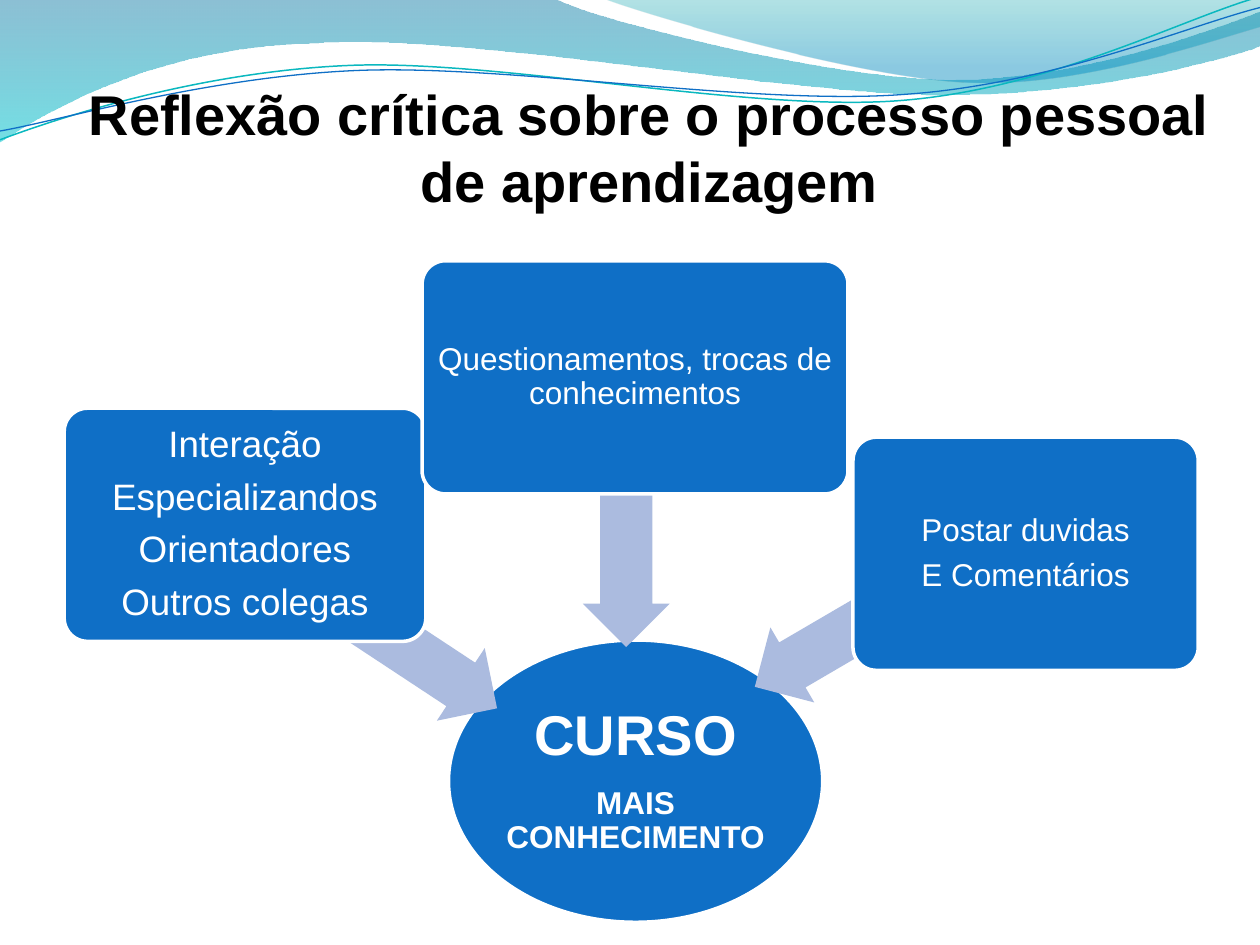
from lxml.etree import SubElement
from pptx import Presentation
from pptx.dml.color import RGBColor
from pptx.enum.shapes import MSO_SHAPE as Shape
from pptx.enum.text import MSO_ANCHOR as Anchor, PP_ALIGN as Align
from pptx.oxml.ns import qn
from pptx.util import Inches, Pt

WHITE = RGBColor(0xFF, 0xFF, 0xFF)
BLACK = RGBColor(0x00, 0x00, 0x00)
BLUE = RGBColor(0x0F, 0x6F, 0xC6)
LAVENDER = RGBColor(0xAB, 0xBB, 0xDF)
TEAL = RGBColor(0x0A, 0xB8, 0xBF)
DEEP_BLUE = RGBColor(0x00, 0x74, 0xA1)
CYAN = RGBColor(0x00, 0xC6, 0xCF)
SEA_GREEN = RGBColor(0x00, 0xA1, 0xA9)
SKY_BLUE = RGBColor(0x00, 0x8B, 0xBF)
FONT = "Arial"

# Content
TITLE = "Reflexão crítica sobre o processo pessoal de aprendizagem"
COURSE = [("CURSO", 32), ("MAIS CONHECIMENTO", 18)]
COURSE_BOX = (3.56, 5.08, 2.97, 2.24)
BOX_HEIGHT, ARROW_HEIGHT = 1.85, 0.69
# Each topic: lines, font size, box (left, top, width), arrow (left, top, width, rotation)
TOPICS = [
    (["Interação", "Especializandos", "Orientadores", "Outros colegas"], 21,
     (0.51, 3.24, 2.87), (1.89, 4.66, 2.24, 213.4)),
    (["Questionamentos, trocas de conhecimentos"], 18,
     (3.35, 2.07, 3.38), (3.98, 3.8, 1.98, 270)),
    (["Postar duvidas", "E Comentários"], 18,
     (6.77, 3.47, 2.74), (5.87, 4.66, 1.77, 329.7)),
]

# Waves: a start point, then straight steps (2 numbers) or Bézier steps (6 numbers)
# Gradient stops: position, colour, opacity in percent
WAVE_BANDS = [
    ([(0, 0), (4.4, -0.01), (4.76, 0.17, 6.64, 0.63, 7.58, 0.63),
      (8.53, 0.63, 9.58, 0.26, 10, 0.09), (10.01, 0.36),
      (9.83, 0.44, 8.7, 0.76, 7.46, 0.75), (6.22, 0.75, 3.82, 0.28, 2.57, 0.34),
      (1.29, 0.36, 0.46, 0.83, -0.01, 1.13)],
     [(0, DEEP_BLUE, 45), (1, CYAN, 55)]),
    ([(4.79, -0.01), (5.09, 0.11, 6.82, 0.62, 7.69, 0.65),
      (8.56, 0.69, 9.61, 0.32, 10, 0.21), (10, 0)],
     [(0, SEA_GREEN, 30), (0.8, SKY_BLUE, 45)]),
]
WAVE_LINES = [
    ([(0, 1.11), (0.48, 0.93, 1.58, 0.57, 2.77, 0.52),
      (3.95, 0.47, 5.93, 0.89, 7.13, 0.8), (8.33, 0.71, 9.38, 0.15, 9.98, -0.02)],
     TEAL, 0.85),
    ([(0, 1.04), (0.47, 0.96, 1.64, 0.61, 2.83, 0.56),
      (4.03, 0.51, 5.97, 0.84, 7.17, 0.75), (8.36, 0.67, 9.41, 0.21, 10, 0.06)],
     BLUE, 0.75),
]


def add_wave(shapes, steps, close):
    """Draw straight segments, then bend those that are Bézier steps."""
    anchors = [(Inches(step[-2]), Inches(step[-1])) for step in steps]
    builder = shapes.build_freeform(*anchors[0])
    builder.add_line_segments(anchors[1:], close=close)
    wave = builder.convert_to_shape()
    wave.shadow.inherit = False
    segments = list(wave.element.spPr.iter(qn("a:lnTo")))
    for segment, step in zip(segments, steps[1:]):
        if len(step) == 6:
            segment.clear()
            segment.tag = qn("a:cubicBezTo")
            for x, y in zip(step[::2], step[1::2]):
                SubElement(segment, qn("a:pt"), x=str(Inches(x) - wave.left),
                           y=str(Inches(y) - wave.top))
    return wave


def fill_gradient(wave, stops):
    wave.line.fill.background()
    wave.fill.gradient()
    wave.fill.gradient_angle = 270
    for stop, (position, color, _) in zip(wave.fill.gradient_stops, stops):
        stop.position = position
        stop.color.rgb = color
    colors = list(wave.element.spPr.iter(qn("a:srgbClr")))
    for color, (_, _, opacity) in zip(colors, stops):
        SubElement(color, qn("a:alpha"), val=str(opacity * 1000))


def add_solid(shapes, kind, box, color):
    shape = shapes.add_shape(kind, *map(Inches, box))
    shape.shadow.inherit = False
    shape.fill.solid()
    shape.fill.fore_color.rgb = color
    shape.line.fill.background()
    return shape


def write(shape, lines, color, bold, insets, anchor=Anchor.MIDDLE):
    frame = shape.text_frame
    frame.word_wrap = True
    frame.vertical_anchor = anchor
    (frame.margin_left, frame.margin_top,
     frame.margin_right, frame.margin_bottom) = map(Inches, insets)
    for i, (text, size) in enumerate(lines):
        paragraph = frame.add_paragraph() if i else frame.paragraphs[0]
        paragraph.text = text
        paragraph.alignment = Align.CENTER
        font = paragraph.font
        font.name, font.size, font.bold = FONT, Pt(size), bold
        font.color.rgb = color
    return frame.paragraphs


def add_label(shapes, kind, box, lines, bold, inset):
    label = add_solid(shapes, kind, box, BLUE)
    label.line.color.rgb = WHITE
    label.line.width = Pt(2)
    for paragraph, (_, size) in zip(write(label, lines, WHITE, bold, [inset] * 4), lines):
        paragraph.line_spacing = 0.9
        paragraph.space_after = Pt(0.35 * size)
    return label


def main():
    deck = Presentation()
    deck.slide_width, deck.slide_height = Inches(10), Inches(7.5)
    shapes = deck.slides.add_slide(deck.slide_layouts[6]).shapes

    # Wave header
    for steps, stops in WAVE_BANDS:
        fill_gradient(add_wave(shapes, steps, close=True), stops)
    for steps, color, width in WAVE_LINES:
        wave = add_wave(shapes, steps, close=False)
        wave.fill.background()
        wave.line.color.rgb = color
        wave.line.width = Pt(width)

    # Title
    title = shapes.add_textbox(*map(Inches, (0.43, 0.68, 9.45, 1.02)))
    write(title, [(TITLE, 32)], BLACK, True, (0, 0.05, 0, 0), Anchor.BOTTOM)

    # Course, with each topic pointing at it
    add_label(shapes, Shape.OVAL, COURSE_BOX, COURSE, True, 0.02)
    for lines, size, (left, top, width), (*arrow_place, rotation) in TOPICS:
        arrow = add_solid(shapes, Shape.LEFT_ARROW, (*arrow_place, ARROW_HEIGHT), LAVENDER)
        arrow.rotation = rotation
        arrow.adjustments[0] = 0.6
        arrow.adjustments[1] = 0.5
        box = add_label(shapes, Shape.ROUNDED_RECTANGLE, (left, top, width, BOX_HEIGHT),
                        [(line, size) for line in lines], False, 0.04)
        box.adjustments[0] = 0.1

    deck.save("out.pptx")


if __name__ == "__main__":
    main()
